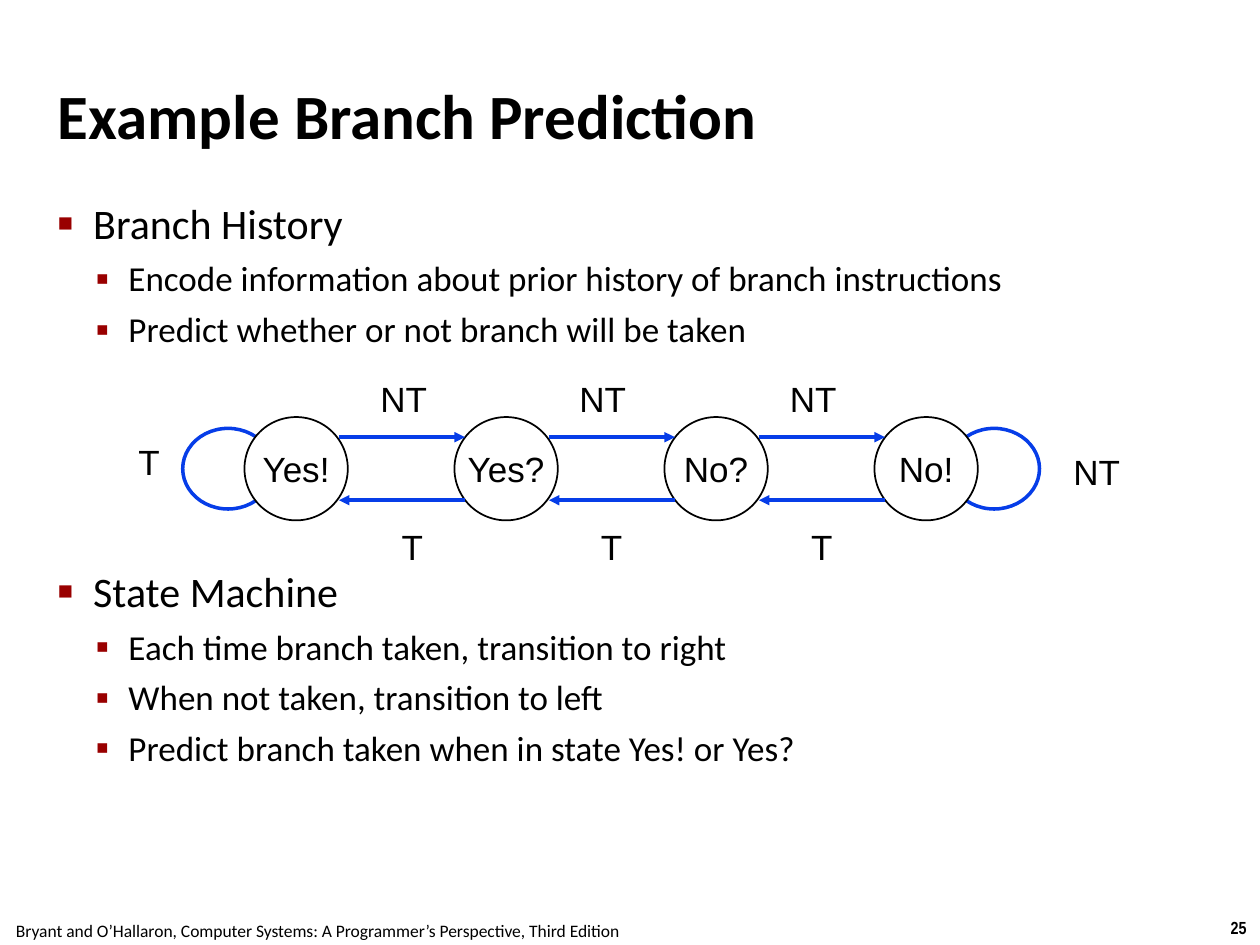
from lxml import etree
from pptx import Presentation
from pptx.dml.color import RGBColor
from pptx.enum.shapes import MSO_CONNECTOR, MSO_SHAPE
from pptx.enum.text import MSO_ANCHOR, PP_ALIGN
from pptx.oxml.ns import qn
from pptx.util import Inches, Pt

LEFT, CENTER = PP_ALIGN.LEFT, PP_ALIGN.CENTER
MIDDLE = MSO_ANCHOR.MIDDLE
BLACK = RGBColor(0x00, 0x00, 0x00)
WHITE = RGBColor(0xFF, 0xFF, 0xFF)
BLUE = RGBColor(0x06, 0x3D, 0xE8)
RED = RGBColor(0x99, 0x00, 0x00)

TITLE = "Example Branch Prediction"
FOOTER = ("Bryant and O’Hallaron, Computer Systems: "
          "A Programmer’s Perspective, Third Edition")
PAGE_NUMBER = "25"
OUTLINE = [
    ("Branch History", [
        "Encode information about prior history of branch instructions",
        "Predict whether or not branch will be taken",
    ]),
    ("State Machine", [
        "Each time branch taken, transition to right",
        "When not taken, transition to left",
        "Predict branch taken when in state Yes! or Yes?",
    ]),
]
# size, space before, text indent, hanging, bullet, bullet percent
LEVELS = [(24, 6, 0.28, 0.28, "■", 60), (20, 5, 0.56, 0.26, "▪", 110)]
DIAGRAM_GAP = 123.6  # points kept free above the second heading

STATES = ["Yes!", "Yes?", "No?", "No!"]
STATE_LEFT, STATE_TOP, STATE_SIZE, STATE_PITCH = 1.94, 3.31, 0.82, 5 / 3
LOOP_LEFTS, LOOP_TOP, LOOP_SIZE = (1.45, 7.53), 3.4, (0.72, 0.64)
ARROW_START, ARROW_LENGTH = 0.75, 1
FORWARD_Y, BACK_Y = 3.47, 3.97
NT_LEFTS, NT_TOP, NT_WIDTH = (2.92, 4.5, 6.17), 2.95, 0.57
T_OFFSET, T_TOP, T_WIDTH = 0.17, 4.12, 0.37
LABEL_HEIGHT = 0.44


def add_run(paragraph, text, size, font, bold=False):
    run = paragraph.add_run()
    run.text = text
    run.font.size = Pt(size)
    run.font.name = font
    run.font.bold = bold
    run.font.color.rgb = BLACK


def set_margins(frame, horizontal, vertical):
    frame.margin_left = frame.margin_right = Inches(horizontal)
    frame.margin_top = frame.margin_bottom = Inches(vertical)


def add_frame(slide, left, top, width, height, margins=(0.1, 0.05), wrap=False):
    box = slide.shapes.add_textbox(*map(Inches, (left, top, width, height)))
    frame = box.text_frame
    frame.word_wrap = wrap
    set_margins(frame, *margins)
    return frame


def add_label(slide, text, left, top, width, height=LABEL_HEIGHT, size=20,
              font="Arial", bold=False, align=LEFT):
    paragraph = add_frame(slide, left, top, width, height).paragraphs[0]
    paragraph.alignment = align
    add_run(paragraph, text, size, font, bold)


def add_bullet(paragraph, character, percent, indent, hanging):
    properties = paragraph._p.get_or_add_pPr()
    properties.set("marL", str(Inches(indent)))
    properties.set("indent", str(-Inches(hanging)))
    color = etree.SubElement(properties, qn("a:buClr"))
    etree.SubElement(color, qn("a:srgbClr"), val=str(RED))
    etree.SubElement(properties, qn("a:buSzPct"), val=str(percent * 1000))
    etree.SubElement(properties, qn("a:buFont"), typeface="Arial")
    etree.SubElement(properties, qn("a:buChar"), char=character)


def add_outline(slide):
    frame = add_frame(slide, 0.42, 1.53, 9.17, 5.94, (0.04, 0.04), wrap=True)
    lines = [(level, text) for heading, points in OUTLINE
             for level, text in [(0, heading)] + [(1, p) for p in points]]
    for index, (level, text) in enumerate(lines):
        size, before, indent, hanging, character, percent = LEVELS[level]
        paragraph = frame.add_paragraph() if index else frame.paragraphs[0]
        paragraph.level = level
        paragraph.space_before = Pt(DIAGRAM_GAP if index and level == 0 else before)
        add_bullet(paragraph, character, percent, indent, hanging)
        add_run(paragraph, text, size, "Calibri")


def add_ellipse(slide, left, top, width, height, line_color, line_width):
    shape = slide.shapes.add_shape(
        MSO_SHAPE.OVAL, *map(Inches, (left, top, width, height)))
    shape.shadow.inherit = False
    shape.fill.background()
    shape.line.color.rgb = line_color
    shape.line.width = Pt(line_width)
    return shape


def add_state(slide, text, left):
    shape = add_ellipse(slide, left, STATE_TOP, STATE_SIZE, STATE_SIZE, BLACK, 1)
    shape.fill.solid()
    shape.fill.fore_color.rgb = WHITE
    frame = shape.text_frame
    frame.word_wrap = False
    frame.vertical_anchor = MIDDLE
    set_margins(frame, 0.1, 0.05)
    frame.paragraphs[0].alignment = CENTER
    add_run(frame.paragraphs[0], text, 20, "Arial")


def add_arrow(slide, start, end, y):
    arrow = slide.shapes.add_connector(
        MSO_CONNECTOR.STRAIGHT, *map(Inches, (start, y, end, y)))
    arrow.line.color.rgb = BLUE
    arrow.line.width = Pt(2)
    etree.SubElement(arrow.line._get_or_add_ln(), qn("a:tailEnd"), type="triangle")
    etree.SubElement(arrow._element.spPr, qn("a:effectLst"))


def add_state_machine(slide):
    for left in LOOP_LEFTS:
        add_ellipse(slide, left, LOOP_TOP, *LOOP_SIZE, BLUE, 2)
    state_lefts = [STATE_LEFT + i * STATE_PITCH for i in range(len(STATES))]
    for text, left in zip(STATES, state_lefts):
        add_state(slide, text, left)
    for state_left, label_left in zip(state_lefts, NT_LEFTS):
        start = state_left + ARROW_START
        end = start + ARROW_LENGTH
        add_arrow(slide, start, end, FORWARD_Y)
        add_arrow(slide, end, start, BACK_Y)
        add_label(slide, "NT", label_left, NT_TOP, NT_WIDTH)
        add_label(slide, "T", label_left + T_OFFSET, T_TOP, T_WIDTH)
    add_label(slide, "T", 1, 3.45, T_WIDTH)
    add_label(slide, "NT", 8.42, 3.53, NT_WIDTH)


def main():
    presentation = Presentation()
    presentation.slide_width = Inches(10)
    presentation.slide_height = Inches(7.5)
    slide = presentation.slides.add_slide(presentation.slide_layouts[6])

    add_label(slide, PAGE_NUMBER, 9.66, 7.23, 0.34, 0.27, 10, "Arial Narrow",
              bold=True, align=CENTER)
    add_label(slide, FOOTER, -0.02, 7.25, 5.08, 0.27, 10, "Calibri", align=CENTER)
    title = add_frame(slide, 0.42, 0.28, 9.17, 1.25, (0.04, 0.04), wrap=True)
    title.vertical_anchor = MIDDLE
    add_run(title.paragraphs[0], TITLE, 36, "Calibri", bold=True)
    add_outline(slide)
    add_state_machine(slide)
    presentation.save("out.pptx")


if __name__ == "__main__":
    main()
